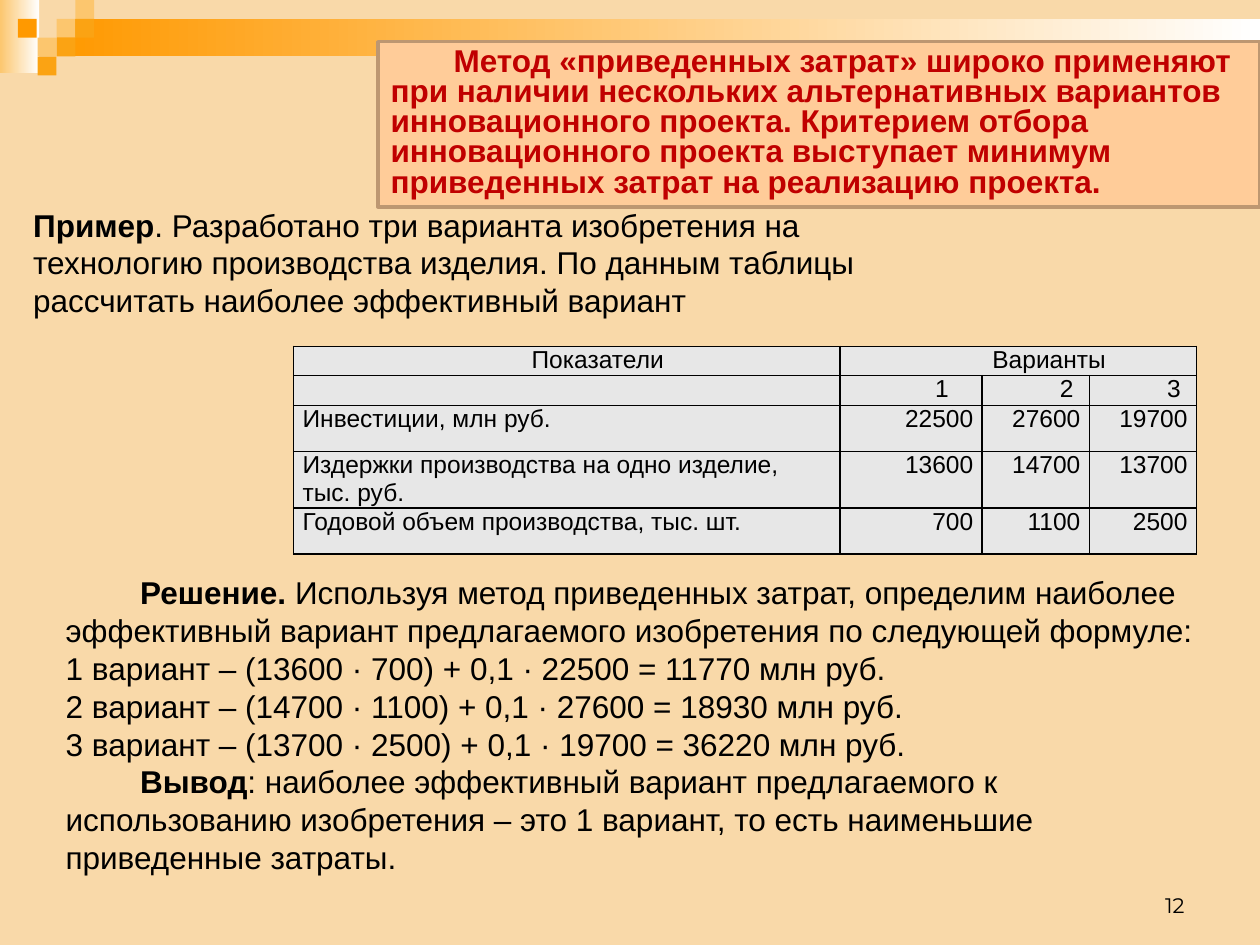
import pptx
import pptx.dml.color
import pptx.enum.shapes
import pptx.enum.text
import pptx.oxml.ns
import pptx.util
from lxml import etree

Cm = pptx.util.Cm
Pt = pptx.util.Pt
RGBColor = pptx.dml.color.RGBColor
ALIGN = pptx.enum.text.PP_ALIGN
ANCHOR = pptx.enum.text.MSO_ANCHOR
qn = pptx.oxml.ns.qn

SAND = RGBColor(0xF9, 0xD9, 0xA9)
PALE = RGBColor(0xFC, 0xC6, 0x6E)
AMBER = RGBColor(0xFB, 0xA3, 0x13)
ORANGE = RGBColor(0xFF, 0x99, 0x00)
WHITE = RGBColor(0xFF, 0xFF, 0xFF)
PEACH = RGBColor(0xFF, 0xCC, 0x99)
BROWN = RGBColor(0xBD, 0x97, 0x71)
RED = RGBColor(0xC0, 0x00, 0x00)
BLACK = RGBColor(0x00, 0x00, 0x00)
GREY = RGBColor(0xE7, 0xE7, 0xE7)

TILE = 0.38
TILES = [
    (1.14, 0.38, PALE), (1.52, 0, PALE), (1.52, 0.38, AMBER),
    (0.76, 0.76, PALE), (0.36, 0.38, ORANGE), (1.14, 0.76, AMBER),
    (0.76, 1.14, AMBER),
]
METHOD = [(1.27, [("Метод «приведенных затрат» широко применяют при наличии нескольких "
                   "альтернативных вариантов инновационного проекта. Критерием отбора "
                   "инновационного проекта выступает минимум приведенных затрат на "
                   "реализацию проекта.", True)])]
EXAMPLE = [(0, [("Пример", True),
                (". Разработано три варианта изобретения на технологию производства "
                 "изделия. По данным таблицы рассчитать наиболее эффективный вариант", False)])]
SOLUTION = [
    (1.5, [("Решение.", True),
           (" Используя метод приведенных затрат, определим наиболее эффективный "
            "вариант предлагаемого изобретения по следующей формуле:", False)]),
    (0, [("1 вариант – (13600 · 700) + 0,1 · 22500 = 11770 млн руб.", False)]),
    (0, [("2 вариант – (14700 · 1100) + 0,1 · 27600 = 18930 млн руб.", False)]),
    (0, [("3 вариант – (13700 · 2500) + 0,1 · 19700 = 36220 млн руб.", False)]),
    (1.5, [("Вывод", True),
           (": наиболее эффективный вариант предлагаемого к использованию изобретения "
            "– это 1 вариант, то есть наименьшие приведенные затраты.", False)]),
]
ROWS = [
    ["Показатели", "Варианты", "", ""],
    ["", "1", "2", "3"],
    ["Инвестиции, млн руб.", "22500", "27600", "19700"],
    ["Издержки производства на одно изделие, тыс. руб.", "13600", "14700", "13700"],
    ["Годовой объем производства, тыс. шт.", "700", "1100", "2500"],
]
COL_WIDTHS = [11.01, 2.87, 2.16, 2.16]
ROW_HEIGHTS = [0.59, 0.59, 0.93, 1.14, 0.93]


def set_attrs(obj, values):
    for name, value in values.items():
        setattr(obj, name, value)


def place(sp, x, y, w, h):
    set_attrs(sp, {"left": Cm(x), "top": Cm(y), "width": Cm(w), "height": Cm(h)})


def write_paragraph(p, runs, size=18, font="Arial", color=BLACK, indent=0, **fmt):
    set_attrs(p, {"alignment": ALIGN.LEFT, "space_before": Pt(0), **fmt})
    pPr = p._p.get_or_add_pPr()
    pPr.set("marL", "0")
    pPr.set("indent", str(Cm(indent)))
    etree.SubElement(pPr, qn("a:buNone"))
    for text, bold in runs:
        r = p.add_run()
        r.text = text
        set_attrs(r.font, {"size": Pt(size), "name": font, "bold": bold})
        r.font.color.rgb = color


def write_text(sp, paragraphs, anchor=ANCHOR.TOP, **fmt):
    tf = sp.text_frame
    set_attrs(tf, {"word_wrap": True, "vertical_anchor": anchor,
                   "auto_size": pptx.enum.text.MSO_AUTO_SIZE.NONE})
    for i, (indent, runs) in enumerate(paragraphs):
        p = tf.add_paragraph() if i else tf.paragraphs[0]
        write_paragraph(p, runs, indent=indent, **fmt)


def add_text(s, box, paragraphs, **fmt):
    write_text(s.shapes.add_textbox(*map(Cm, box)), paragraphs, **fmt)


def add_block(s, box, color, fade=False):
    sp = s.shapes.add_shape(pptx.enum.shapes.MSO_SHAPE.RECTANGLE, *map(Cm, box))
    sp.shadow.inherit = False
    sp.line.fill.background()
    if fade:
        sp.fill.gradient()
        sp.fill.gradient_angle = 0
        for stop, rgb in zip(sp.fill.gradient_stops, (color, WHITE)):
            stop.color.rgb = rgb
    else:
        sp.fill.solid()
        sp.fill.fore_color.rgb = color


def add_decoration(s):
    add_block(s, (0, 0, 0.79, 1.47), PALE, fade=True)
    add_block(s, (1.14, 0.38, 24.26, 0.76), ORANGE, fade=True)
    for x, y, color in TILES:
        add_block(s, (x, y, TILE, TILE), color)


def add_method(s):
    sp = s.shapes.title
    place(sp, 7.62, 0.84, 17.78, 3.33)
    sp.fill.solid()
    sp.fill.fore_color.rgb = PEACH
    sp.line.color.rgb = BROWN
    sp.line.width = Pt(2)
    write_text(sp, METHOD, color=RED, line_spacing=0.8)
    sp.element.getparent().append(sp.element)


def add_borders(cell):
    tcPr = cell._tc.get_or_add_tcPr()
    for side in ("lnL", "lnR", "lnT", "lnB"):
        ln = etree.SubElement(tcPr, qn(f"a:{side}"), w=str(Pt(1)))
        fill = etree.SubElement(ln, qn("a:solidFill"))
        etree.SubElement(fill, qn("a:srgbClr"), val=str(BLACK))


def format_cell(cell, text, header, first):
    add_borders(cell)
    cell.fill.solid()
    cell.fill.fore_color.rgb = GREY
    set_attrs(cell, {"margin_left": Cm(0.18), "margin_right": Cm(0.18),
                     "margin_top": 0, "margin_bottom": 0})
    p = cell.text_frame.paragraphs[0]
    if not text:
        etree.SubElement(p._p, qn("a:endParaRPr"), sz="1400")
    elif header:
        write_paragraph(p, [(text, False)], size=14, indent=1.25, alignment=ALIGN.CENTER)
    else:
        write_paragraph(p, [(text, False)], size=14,
                        alignment=ALIGN.LEFT if first else ALIGN.RIGHT)


def add_costs(s):
    box = (5.92, 6.98, sum(COL_WIDTHS), sum(ROW_HEIGHTS))
    table = s.shapes.add_table(len(ROWS), len(COL_WIDTHS), *map(Cm, box)).table
    for col, width in zip(table.columns, COL_WIDTHS):
        col.width = Cm(width)
    for row, height in zip(table.rows, ROW_HEIGHTS):
        row.height = Cm(height)
    for i, texts in enumerate(ROWS):
        for j, text in enumerate(texts):
            format_cell(table.cell(i, j), text, i < 2, j == 0)
    table.cell(0, 1).merge(table.cell(0, 3))


def add_solution(s):
    sp = s.placeholders[1]
    place(sp, 1.07, 11.43, 23.28, 6.4)
    write_text(sp, SOLUTION)


def main():
    prs = pptx.Presentation()
    set_attrs(prs, {"slide_width": Cm(25.4), "slide_height": Cm(19.05)})
    s = prs.slides.add_slide(prs.slide_layouts[1])
    s.background.fill.solid()
    s.background.fill.fore_color.rgb = SAND
    add_decoration(s)
    add_text(s, (18.2, 17.36, 5.93, 1.27), [(0, [("12", False)])],
             anchor=ANCHOR.BOTTOM, size=12, font="Montserrat", alignment=ALIGN.RIGHT)
    add_method(s)
    add_text(s, (0.42, 4.02, 19.25, 2.57), EXAMPLE)
    add_costs(s)
    add_solution(s)
    prs.save("out.pptx")


if __name__ == "__main__":
    main()
